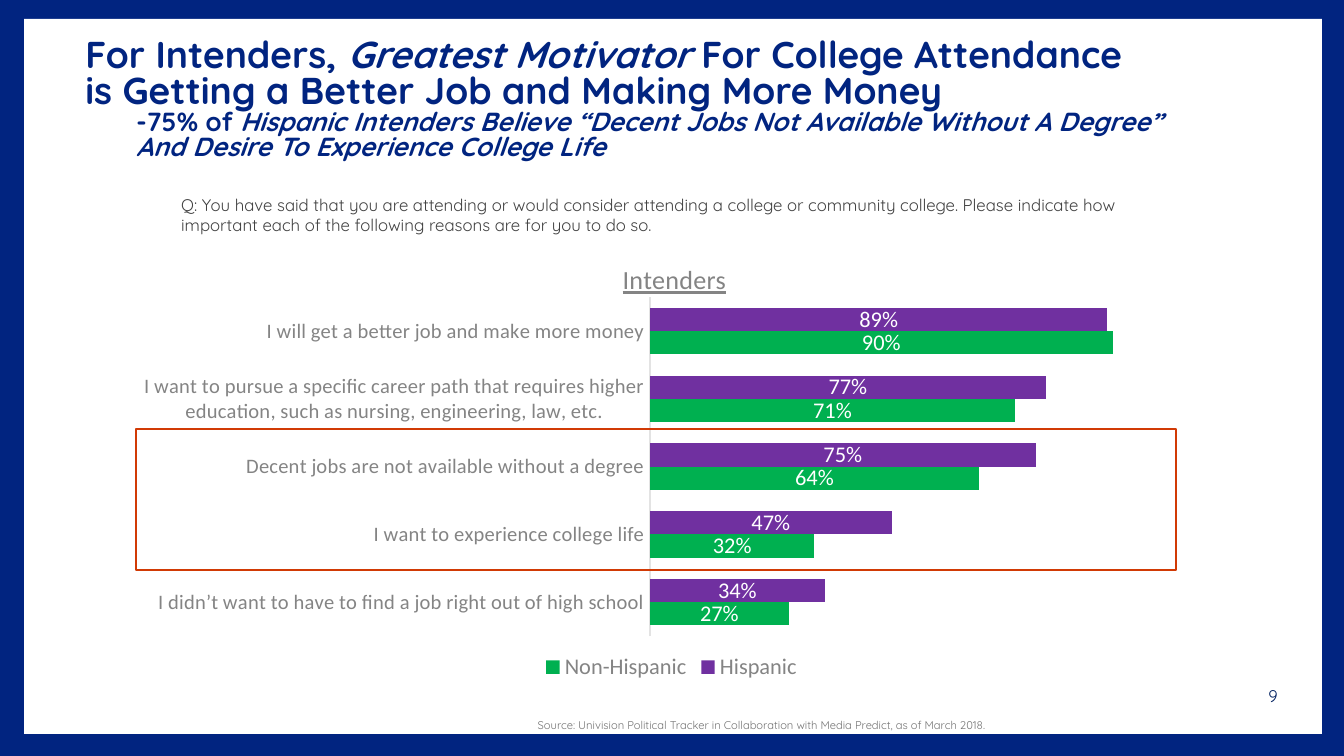
from lxml import etree
from pptx import Presentation
from pptx.chart.data import CategoryChartData as Data
from pptx.dml.color import RGBColor as Rgb
from pptx.enum.chart import XL_CHART_TYPE as Kind, XL_LABEL_POSITION as Spot
from pptx.enum.chart import XL_LEGEND_POSITION as Side, XL_TICK_MARK as Tick
from pptx.enum.shapes import MSO_SHAPE as Form
from pptx.enum.text import MSO_ANCHOR as Anchor, MSO_AUTO_SIZE as Fit, PP_ALIGN as Align
from pptx.util import Pt

PX = 914400 / 134.4
HUES = {"navy": "012480", "white": "FFFFFF", "ink": "424242", "gray": "848484",
        "note": "747474", "page": "002060", "axis": "E3E3E3", "box": "D13A05",
        "purple": "7030A0", "green": "00B050"}


def style(font, hue, **form):
    for key, val in form.items():
        setattr(font, key, val)
    font.color.rgb = Rgb.from_string(HUES[hue])


def layout(node, spot, vals, inner=False):
    space = node.nsmap["c"]
    tag = "{%s}" % space
    for old in node.findall(tag + "layout"):
        node.remove(old)
    outer = etree.Element(tag + "layout")
    man = etree.SubElement(outer, tag + "manualLayout")
    if inner:
        etree.SubElement(man, tag + "layoutTarget", val="inner")
    for key in list(vals)[:2]:
        etree.SubElement(man, tag + key + "Mode", val="edge")
    for key, val in vals.items():
        etree.SubElement(man, tag + key, val=str(val))
    node.insert(spot, outer)


deck = Presentation()
deck.slide_width, deck.slide_height = int(1344 * PX), int(756 * PX)
slide = deck.slides.add_slide(deck.slide_layouts[5])
shapes = slide.shapes
title = shapes.title

# Navy border and white panel, behind the title
for hue, area in (("navy", (0, 0, 1344, 756)), ("white", (24, 19, 1298, 715))):
    panel = shapes.add_shape(Form.RECTANGLE, *[int(n * PX) for n in area])
    panel.shadow.inherit = False
    panel.fill.solid()
    panel.fill.fore_color.rgb = Rgb.from_string(HUES[hue])
    panel.line.fill.background()
    title._element.addprevious(panel._element)

# Title: two headline lines, two indented lines below
title.left, title.top, title.width, title.height = [int(n * PX) for n in (22, 39, 1260, 124)]
frame = title.text_frame
frame.auto_size, frame.word_wrap = Fit.NONE, True
frame.vertical_anchor = Anchor.MIDDLE
lines = [
    (20, 50, [("For Intenders, ", False), ("Greatest Motivator ", True),
              ("For College Attendance", False)]),
    (20, 50, [("is Getting a Better Job and Making More Money", False)]),
    (14, 101, [("-75% of ", False),
               ("Hispanic Intenders Believe “Decent Jobs Not Available Without A Degree”", True)]),
    (14, 101, [("And Desire To Experience College Life", True)]),
]
for row, (size, left, runs) in enumerate(lines):
    para = frame.paragraphs[0] if row == 0 else frame.add_paragraph()
    para.alignment, para.line_spacing = Align.LEFT, 0.8
    para.space_before = para.space_after = Pt(0)
    props = para._p.get_or_add_pPr()
    props.set("marL", str(int(left * PX)))
    props.set("indent", "0")
    for text, slant in runs:
        run = para.add_run()
        run.text = text
        style(run.font, "navy", name="Quicksand", size=Pt(size), bold=True, italic=slant)

# Source, question and page number
notes = [
    ((42, 712, 956, 27), "Source: Univision Political Tracker in Collaboration with Media Predict, "
     "as of March 2018.", 6, "note", Align.RIGHT, Anchor.TOP),
    ((168, 188, 1008, 54), "Q: You have said that you are attending or would consider attending a "
     "college or community college. Please indicate how important each of the following reasons "
     "are for you to do so.", 9, "ink", Align.LEFT, Anchor.TOP),
    ((1248, 676, 50, 40), "9", 9, "page", Align.CENTER, Anchor.MIDDLE),
]
for area, text, size, hue, align, anchor in notes:
    frame = shapes.add_textbox(*[int(n * PX) for n in area]).text_frame
    frame.word_wrap, frame.vertical_anchor = True, anchor
    para = frame.paragraphs[0]
    para.text, para.alignment = text, align
    style(para.runs[0].font, hue, name="Quicksand", size=Pt(size))

# Bar chart
data = Data(number_format="0%")
data.categories = [
    "I will get a better job and make more money",
    "I want to pursue a specific career path that requires higher education, "
    "such as nursing, engineering, law, etc.",
    "Decent jobs are not available without a degree",
    "I want to experience college life",
    "I didn’t want to have to find a job right out of high school",
]
data.add_series("Hispanic", (0.89, 0.77, 0.75, 0.47, 0.34))
data.add_series("Non-Hispanic", (0.9, 0.71, 0.64, 0.32, 0.27))
area = [int(n * PX) for n in (136, 234, 1071, 452)]
chart = shapes.add_chart(Kind.BAR_CLUSTERED, *area, data).chart
style(chart.font, "ink", name="Calibri", size=Pt(12))

chart.has_title = True
head = chart.chart_title.text_frame
head.text = "Intenders"
style(head.paragraphs[0].runs[0].font, "gray", name="Calibri", size=Pt(14),
      bold=False, underline=True)
layout(chart.chart_title._element, 1, {"x": 0.45, "y": 0.05})
layout(chart._chartSpace.chart.plotArea, 0,
       {"x": 0.48, "y": 0.14, "w": 0.48, "h": 0.75}, inner=True)

chart.has_legend = True
key = chart.legend
key.position, key.include_in_layout = Side.BOTTOM, False
style(key.font, "gray", name="Calibri", size=Pt(12))

# Axes
cats, vals = chart.category_axis, chart.value_axis
cats.reverse_order = True
cats.major_tick_mark = cats.minor_tick_mark = Tick.NONE
style(cats.tick_labels.font, "gray", name="Calibri", size=Pt(11))
cats.format.line.color.rgb = Rgb.from_string(HUES["axis"])
cats.format.line.width = Pt(0.75)
vals.minimum_scale, vals.maximum_scale = 0, 1
vals.has_major_gridlines = vals.visible = False

# Bars and their labels
plot = chart.plots[0]
plot.gap_width, plot.overlap, plot.vary_by_categories = 92, 0, False
for bars, hue in zip(plot.series, ("purple", "green")):
    bars.format.fill.solid()
    bars.format.fill.fore_color.rgb = Rgb.from_string(HUES[hue])
    tags = bars.data_labels
    tags.show_value, tags.position = True, Spot.CENTER
    tags.number_format, tags.number_format_is_linked = "0%", False
    style(tags.font, "white", name="Calibri", size=Pt(12))

# Highlight box around two reasons
box = shapes.add_shape(Form.RECTANGLE, *[int(n * PX) for n in (136, 429, 1040, 141)])
box.shadow.inherit = False
box.fill.background()
box.line.color.rgb = Rgb.from_string(HUES["box"])
box.line.width = Pt(1)

deck.save("out.pptx")
